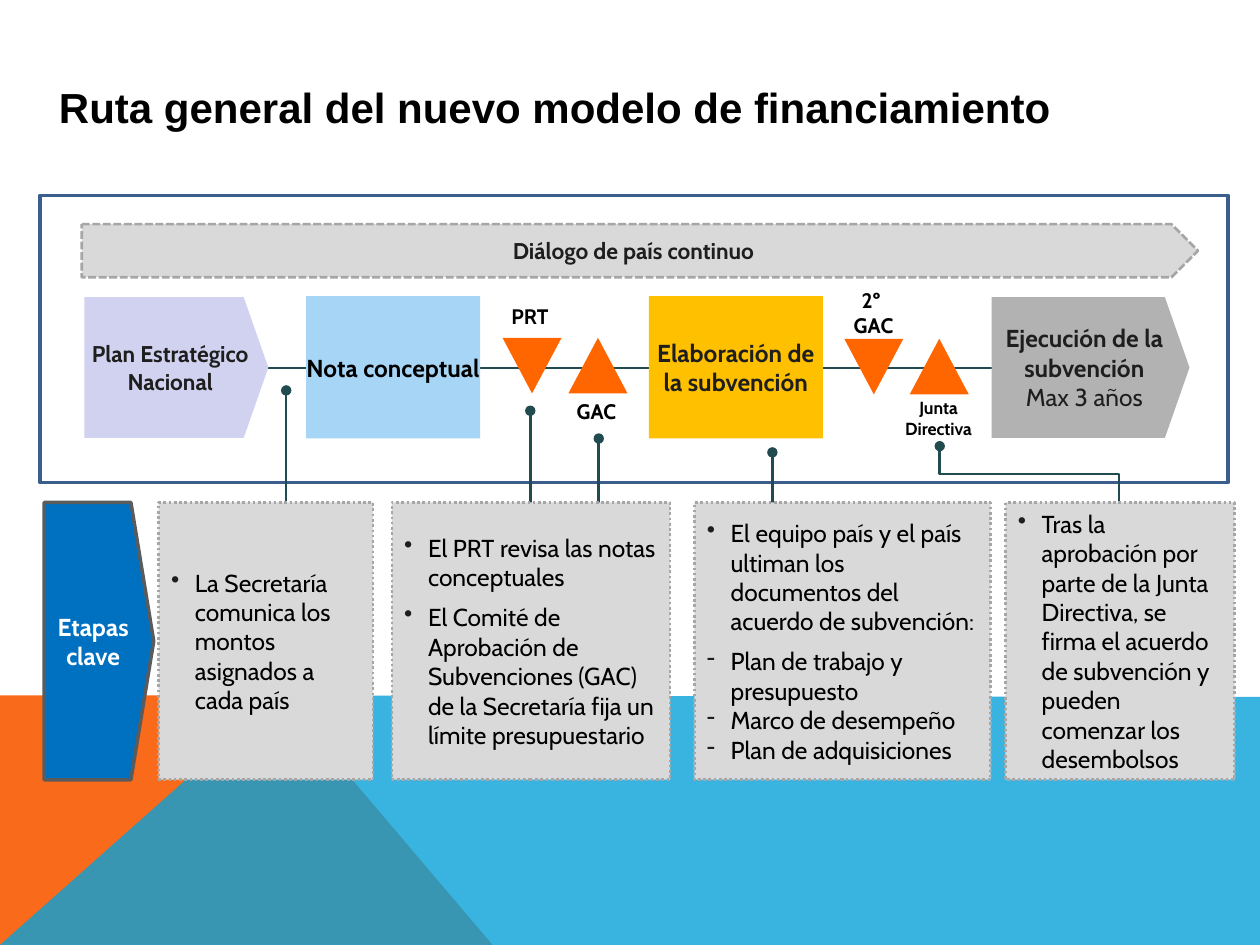
from lxml import etree
from pptx import Presentation
from pptx.dml.color import RGBColor
from pptx.enum.dml import MSO_LINE
from pptx.enum.shapes import MSO_CONNECTOR, MSO_SHAPE
from pptx.enum.text import MSO_ANCHOR, PP_ALIGN
from pptx.oxml.ns import qn
from pptx.util import Cm, Pt

RECT, PENTAGON = MSO_SHAPE.RECTANGLE, MSO_SHAPE.PENTAGON
TRIANGLE = MSO_SHAPE.ISOSCELES_TRIANGLE
STRAIGHT, ELBOW = MSO_CONNECTOR.STRAIGHT, MSO_CONNECTOR.ELBOW
DOTTED, DASHED = MSO_LINE.ROUND_DOT, MSO_LINE.SQUARE_DOT
MIDDLE, TOP = MSO_ANCHOR.MIDDLE, MSO_ANCHOR.TOP
CENTER, LEFT = PP_ALIGN.CENTER, PP_ALIGN.LEFT

BLACK = RGBColor(0x00, 0x00, 0x00)
WHITE = RGBColor(0xFF, 0xFF, 0xFF)
INK = RGBColor(0x1E, 0x1E, 0x1E)
FLOOR_ORANGE = RGBColor(0xF9, 0x6A, 0x1B)
FLOOR_BLUE = RGBColor(0x08, 0xA1, 0xD9)
TEAL = RGBColor(0x22, 0x4B, 0x50)
ORANGE = RGBColor(0xFF, 0x66, 0x00)
SKY = RGBColor(0xA7, 0xD5, 0xF5)
AMBER = RGBColor(0xFF, 0xC0, 0x00)
LILAC = RGBColor(0xD1, 0xD1, 0xF0)
GRAY = RGBColor(0xB2, 0xB2, 0xB2)
LIGHT_GRAY = RGBColor(0xD9, 0xD9, 0xD9)
DOT_GRAY = RGBColor(0xA6, 0xA6, 0xA6)
FRAME_BLUE = RGBColor(0x3A, 0x5F, 0x8C)
STAGE_BLUE = RGBColor(0x00, 0x70, 0xC0)
STAGE_EDGE = RGBColor(0x5A, 0x5B, 0x5D)

INSETS = (0.25, 0.13)
NO_SIDES = (0, 0.13)
HANGING = Cm(0.48)
DETAIL_TOP, DETAIL_HEIGHT = 10.13, 5.59


def add_text(tf, text, size=14, font="Cabin", color=BLACK, bold=False,
             align=CENTER, bullet=None, before=0, after=0):
    """Add one paragraph, using the frame's first one while it is empty."""
    p = tf.paragraphs[0] if not tf.text else tf.add_paragraph()
    p.alignment = align
    p.space_before, p.space_after = Pt(before), Pt(after)
    r = p.add_run()
    r.text = text
    r.font.size, r.font.name, r.font.bold = Pt(size), font, bold
    r.font.color.rgb = color
    if bullet:
        ppr = p._p.get_or_add_pPr()
        ppr.set("marL", str(HANGING))
        ppr.set("indent", str(-HANGING))
        clr = etree.SubElement(ppr, qn("a:buClr"))
        etree.SubElement(clr, qn("a:srgbClr")).set("val", str(INK))
        etree.SubElement(ppr, qn("a:buChar")).set("char", bullet)


def set_frame(tf, insets, anchor=MIDDLE):
    tf.word_wrap = True
    tf.vertical_anchor = anchor
    tf.margin_left = tf.margin_right = Cm(insets[0])
    tf.margin_top = tf.margin_bottom = Cm(insets[1])
    return tf


def add_box(s, kind, x, y, w, h, fill=None, line=None, width=1.5, dash=None,
            adj=None, insets=INSETS):
    sp = s.shapes.add_shape(kind, Cm(x), Cm(y), Cm(w), Cm(h))
    sp.shadow.inherit = False
    if fill is None:
        sp.fill.background()
    else:
        sp.fill.solid()
        sp.fill.fore_color.rgb = fill
    if line is None:
        sp.line.fill.background()
    else:
        sp.line.color.rgb = line
        sp.line.width = Pt(width)
        if dash is not None:
            sp.line.dash_style = dash
    if adj is not None:
        sp.adjustments[0] = adj
    set_frame(sp.text_frame, insets)
    return sp


def add_label(s, x, y, w, h, insets=NO_SIDES, anchor=MIDDLE):
    box = s.shapes.add_textbox(Cm(x), Cm(y), Cm(w), Cm(h))
    return set_frame(box.text_frame, insets, anchor)


def add_line(s, x1, y1, x2, y2, kind=STRAIGHT, dot=None):
    """Draw a connector; dot is 'headEnd' or 'tailEnd' for a round end."""
    cx = s.shapes.add_connector(kind, Cm(x1), Cm(y1), Cm(x2), Cm(y2))
    cx.line.color.rgb = TEAL
    cx.line.width = Pt(1.5)
    sppr = cx._element.spPr
    if dot:
        etree.SubElement(sppr.find(qn("a:ln")), qn(f"a:{dot}")).set("type", "oval")
    etree.SubElement(sppr, qn("a:effectLst"))
    return cx


def add_floor(s, points, color, alpha=None):
    corners = [(Cm(x), Cm(y)) for x, y in points]
    fb = s.shapes.build_freeform(*corners[0])
    fb.add_line_segments(corners[1:], close=True)
    sp = fb.convert_to_shape()
    sp.shadow.inherit = False
    sp.fill.solid()
    sp.fill.fore_color.rgb = color
    sp.line.fill.background()
    if alpha:
        clr = sp._element.spPr.find(qn("a:solidFill"))[0]
        etree.SubElement(clr, qn("a:alpha")).set("val", str(alpha * 1000))


def add_background(s):
    add_floor(s, [(0, 19.05), (0, 14.02), (5.66, 14.02), (9.93, 19.05)], FLOOR_ORANGE)
    add_floor(s, [(0, 19.05), (5.66, 14.02), (25.4, 14.05), (25.4, 19.05)],
              FLOOR_BLUE, alpha=80)


def add_stems(s):
    for x, top, bottom in [(5.77, 7.87, 10.11), (10.69, 8.28, 10.67),
                           (12.07, 8.84, 11.23), (15.57, 9.12, 11.53)]:
        add_line(s, x, bottom, x, top, dot="tailEnd")
    bent = add_line(s, 20.19, 7.75, 21.31, 11.36, kind=ELBOW, dot="headEnd")
    bent.rotation = 270
    bent._element.spPr.find(qn("a:xfrm")).set("flipH", "1")


def add_reviews(s):
    """Triangles on the timeline, pointing down or up, with their labels."""
    for x, y, turn in [(10.13, 6.81, 180), (11.46, 6.81, 0),
                       (17.02, 6.83, 180), (18.34, 6.83, 0)]:
        add_box(s, TRIANGLE, x, y, 1.19, 1.12, fill=ORANGE).rotation = turn
    for x, y, w, h, size, lines in [
            (9.3, 5.99, 2.77, 0.76, 12, ["PRT"]),
            (10.64, 7.9, 2.77, 0.76, 12, ["GAC"]),
            (16.15, 5.66, 2.92, 1.27, 12, ["2º ", "GAC"]),
            (17.5, 7.87, 2.92, 1.12, 10, ["Junta ", "Directiva "])]:
        tf = add_label(s, x, y, w, h)
        for line in lines:
            add_text(tf, line, size=size, bold=True)


def add_phases(s):
    for kind, x, y, w, h, fill, adj, text, size, color in [
            (PENTAGON, 1.7, 5.99, 3.71, 2.84, LILAC, 0.175,
             "Plan Estratégico Nacional", 13, INK),
            (RECT, 6.17, 5.97, 3.51, 2.87, SKY, None, "Nota conceptual", 14, BLACK),
            (RECT, 13.08, 5.97, 3.51, 2.87, AMBER, None,
             "Elaboración de la subvención", 14, INK),
            (PENTAGON, 19.99, 5.99, 3.99, 2.84, GRAY, 0.175,
             "Ejecución de la subvención", 14, INK)]:
        sp = add_box(s, kind, x, y, w, h, fill=fill, adj=adj, insets=NO_SIDES)
        add_text(sp.text_frame, text, size=size, color=color, bold=True)
    add_text(sp.text_frame, "Max 3 años", color=INK)


def add_details(s):
    stage = add_box(s, PENTAGON, 0.89, DETAIL_TOP, 2.21, DETAIL_HEIGHT,
                    fill=STAGE_BLUE, line=STAGE_EDGE, width=2, adj=0.208)
    add_text(stage.text_frame, "Etapas clave", color=WHITE, bold=True)
    for x, w, after, items in [
            (3.2, 4.32, 6, ["La Secretaría comunica los montos asignados a cada país"]),
            (7.9, 5.61, 0, ["El PRT revisa las notas conceptuales",
                            "El Comité de Aprobación de Subvenciones (GAC) de la "
                            "Secretaría fija un límite presupuestario"]),
            (14.0, 5.97, 6, ["El equipo país y el país ultiman los documentos del "
                             "acuerdo de subvención:"]),
            (20.27, 4.62, 6, ["Tras la aprobación por parte de la Junta Directiva, se "
                              "firma el acuerdo de subvención y pueden comenzar los "
                              "desembolsos"])]:
        sp = add_box(s, RECT, x, DETAIL_TOP, w, DETAIL_HEIGHT, fill=LIGHT_GRAY,
                     line=DOT_GRAY, dash=DOTTED, insets=(0.25, 0.05))
        for item in items:
            add_text(sp.text_frame, item, align=LEFT, bullet="•", before=6, after=after)
        if x == 14.0:
            for item in ["Plan de trabajo y presupuesto", "Marco de desempeño",
                         "Plan de adquisiciones"]:
                add_text(sp.text_frame, item, align=LEFT, bullet="-")


def main():
    prs = Presentation()
    prs.slide_width, prs.slide_height = Cm(25.4), Cm(19.05)
    s = prs.slides.add_slide(prs.slide_layouts[6])
    add_background(s)
    title = add_label(s, 0.94, 1.52, 23.55, 1.32, insets=INSETS, anchor=TOP)
    add_text(title, "Ruta general del nuevo modelo de financiamiento", size=24,
             font="Arial", bold=True, align=LEFT)
    add_box(s, RECT, 0.81, 3.94, 23.95, 5.79, line=FRAME_BLUE, width=2)
    banner = add_box(s, PENTAGON, 1.65, 4.52, 22.5, 1.07, fill=LIGHT_GRAY,
                     line=DOT_GRAY, dash=DASHED)
    add_text(banner.text_frame, "Diálogo de país continuo", size=13, color=INK, bold=True)
    add_line(s, 5.13, 7.42, 19.99, 7.42)
    add_phases(s)
    add_reviews(s)
    add_stems(s)
    add_details(s)
    prs.save("out.pptx")


if __name__ == "__main__":
    main()
